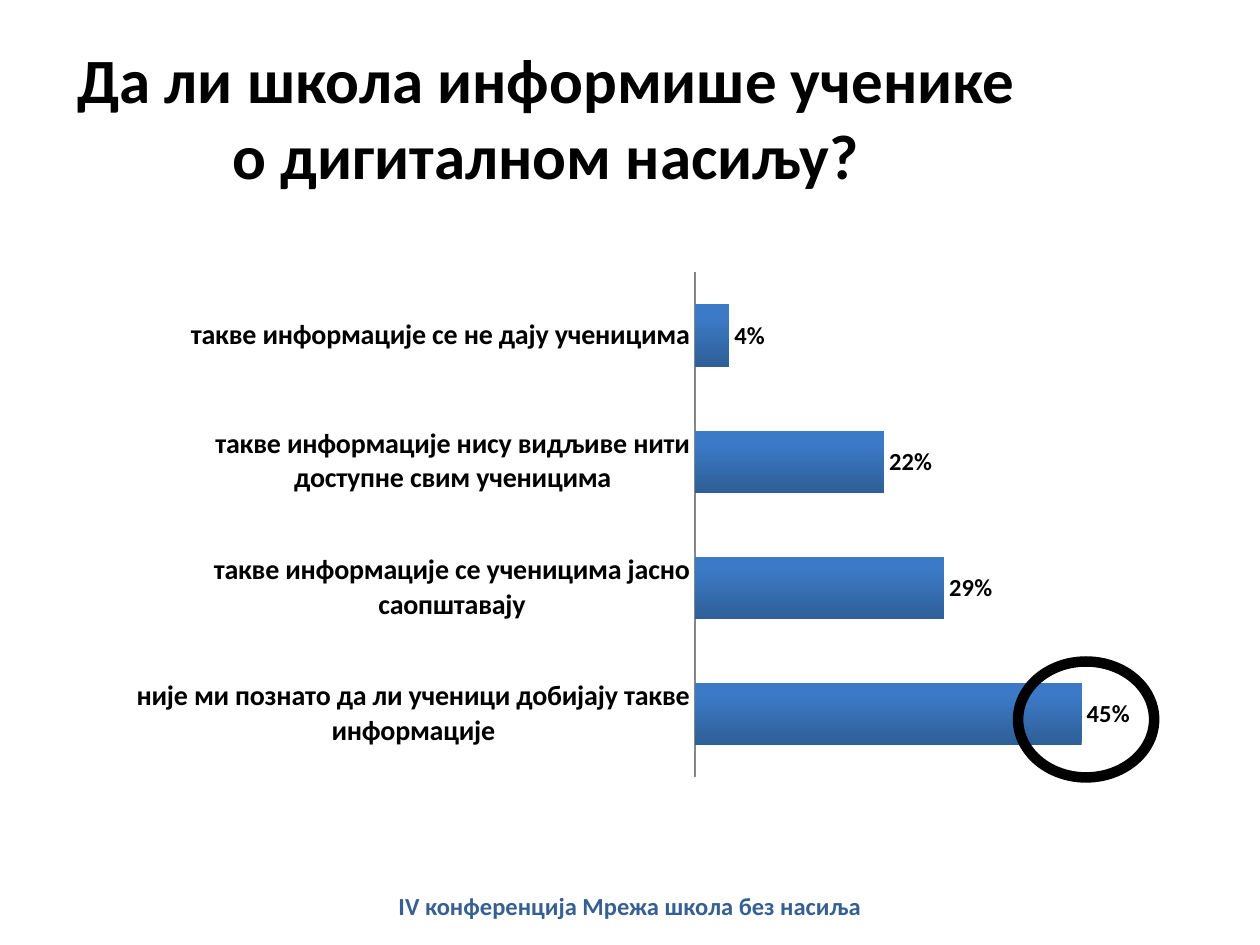
from pptx import Presentation
from pptx.chart.data import CategoryChartData
from pptx.dml.color import RGBColor
from pptx.enum.chart import XL_CHART_TYPE as ChartType
from pptx.enum.chart import XL_LABEL_POSITION as LabelPosition
from pptx.enum.chart import XL_TICK_MARK as TickMark
from pptx.enum.shapes import MSO_SHAPE as ShapeType
from pptx.enum.text import MSO_ANCHOR as Anchor
from pptx.enum.text import PP_ALIGN as Align
from pptx.util import Inches, Pt

FONT = "Calibri"
BLACK = "000000"
ANSWERS = [
    ("није ми познато да ли ученици добијају такве информације", 0.45),
    ("такве информације се ученицима јасно саопштавају", 0.29),
    ("такве информације нису видљиве нити доступне свим ученицима", 0.22),
    ("такве информације се не дају ученицима", 0.04),
]


def color(hex_code):
    return RGBColor.from_string(hex_code)


def format_font(font, size, hex_code=BLACK, bold=True):
    font.name = FONT
    font.size = Pt(size)
    font.bold = bold
    font.color.rgb = color(hex_code)


def place(shape, left, top, width, height):
    shape.left, shape.top = Inches(left), Inches(top)
    shape.width, shape.height = Inches(width), Inches(height)


def write_text(shape, text, size, hex_code=BLACK, anchor=Anchor.MIDDLE):
    frame = shape.text_frame
    frame.word_wrap = True
    frame.vertical_anchor = anchor
    paragraph = frame.paragraphs[0]
    paragraph.alignment = Align.CENTER
    run = paragraph.add_run()
    run.text = text
    format_font(run.font, size, hex_code)
    return frame


def add_footer(slide, text):
    footer = slide.shapes.add_textbox(0, Inches(7.07), Inches(10), Inches(0.4))
    frame = write_text(footer, text, 14, "376092", anchor=Anchor.TOP)
    frame.margin_top = frame.margin_bottom = 0


def add_answer_chart(slide):
    data = CategoryChartData(number_format="0%")
    data.categories = [answer for answer, share in ANSWERS]
    data.add_series("Series 1", [share for answer, share in ANSWERS])
    chart = slide.shapes.add_chart(
        ChartType.BAR_CLUSTERED, Inches(0.92), Inches(2.08),
        Inches(8.17), Inches(4.17), data).chart
    chart.has_legend = False
    chart.has_title = False
    format_font(chart.font, 10, bold=False)

    # Axes
    category_axis = chart.category_axis
    category_axis.major_tick_mark = TickMark.NONE
    category_axis.format.line.color.rgb = color("868686")
    category_axis.format.line.width = Pt(0.75)
    format_font(category_axis.tick_labels.font, 16)
    value_axis = chart.value_axis
    value_axis.minimum_scale, value_axis.maximum_scale = 0, 0.5
    value_axis.has_major_gridlines = False
    value_axis.visible = False

    # Bars, shaded from dark at the bottom to light
    plot = chart.plots[0]
    plot.vary_by_categories = False
    plot.gap_width = 103
    plot.overlap = -25
    fill = plot.series[0].format.fill
    fill.gradient()
    fill.gradient_angle = 90
    shades = [("2E5F97", 0), ("3C7AC7", 0.8)]
    for stop, (hex_code, position) in zip(fill.gradient_stops, shades):
        stop.color.rgb = color(hex_code)
        stop.position = position

    # Value labels
    plot.has_data_labels = True
    labels = plot.data_labels
    labels.show_value = True
    labels.number_format = "0%"
    labels.number_format_is_linked = False
    labels.position = LabelPosition.OUTSIDE_END
    format_font(labels.font, 14)


def add_highlight_ring(slide):
    ring = slide.shapes.add_shape(
        ShapeType.OVAL, Inches(8.08), Inches(5.25), Inches(1.08), Inches(0.92))
    ring.shadow.inherit = False
    ring.fill.background()
    ring.line.color.rgb = color(BLACK)
    ring.line.width = Pt(6)


def main():
    presentation = Presentation()
    presentation.slide_width = Inches(10)
    presentation.slide_height = Inches(7.5)
    slide = presentation.slides.add_slide(presentation.slide_layouts[5])

    add_answer_chart(slide)
    title = slide.shapes.title
    place(title, 0.5, 0.3, 7.67, 1.25)
    write_text(title, "Да ли школа информише ученике о дигиталном насиљу?", 36)
    add_footer(slide, "IV конференција Мрежа школа без насиља")
    add_highlight_ring(slide)

    presentation.save("out.pptx")


if __name__ == "__main__":
    main()
